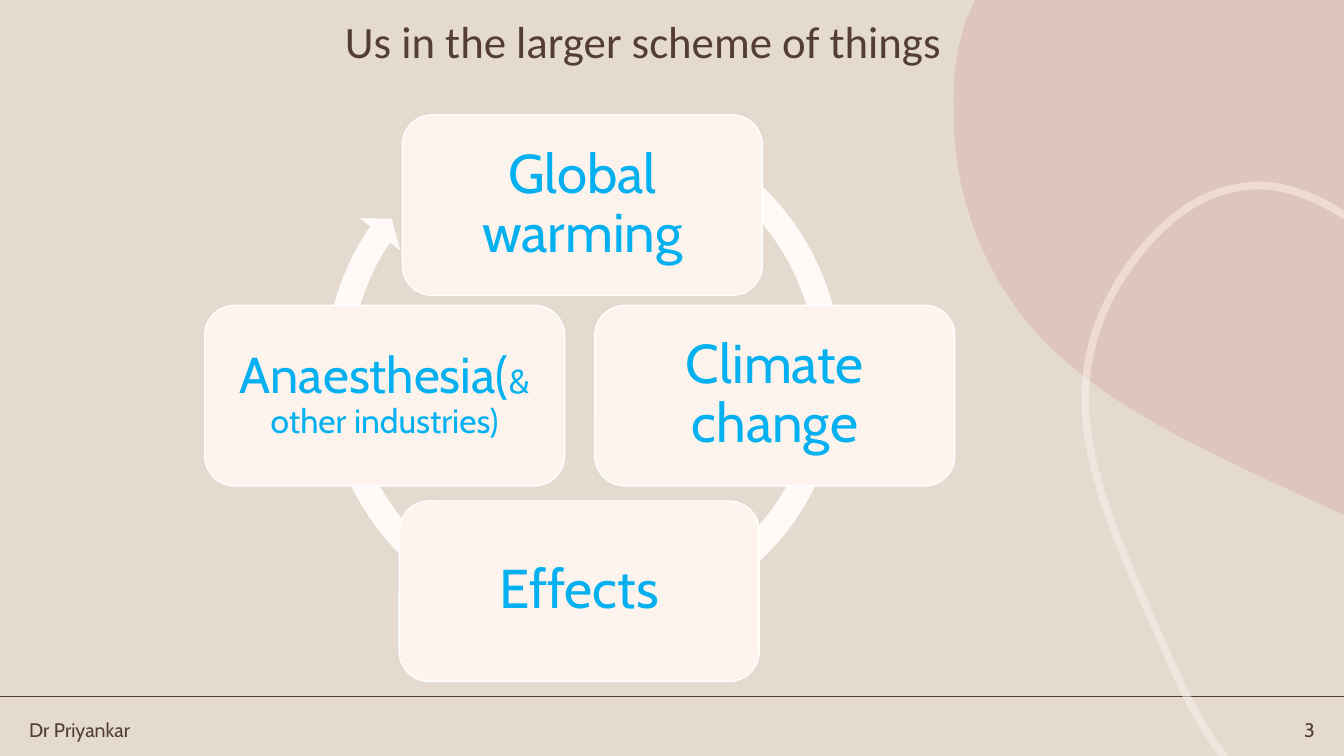
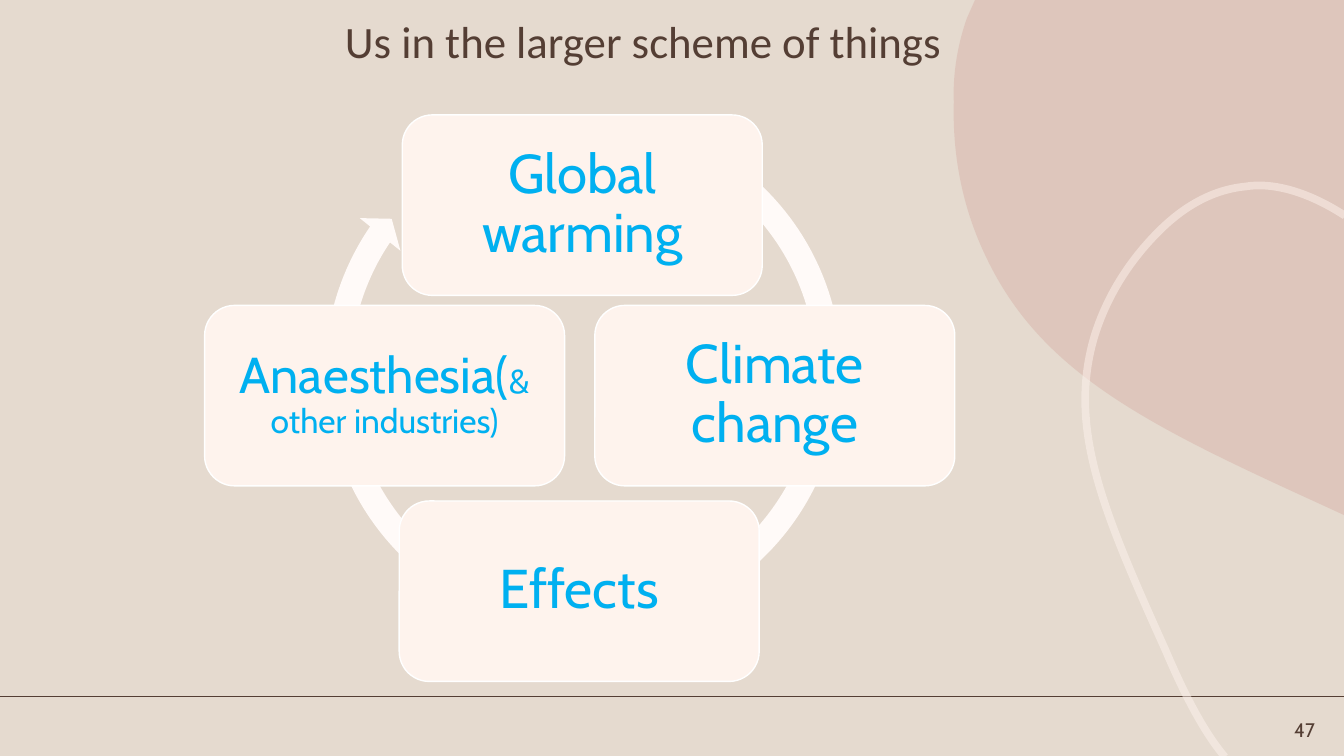
"""Build two slides showing the cycle that links anaesthesia and global warming."""
from dataclasses import dataclass
from itertools import chain

from lxml.etree import SubElement
from pptx import Presentation
from pptx.dml.color import RGBColor
from pptx.enum.shapes import MSO_CONNECTOR as Connector, MSO_SHAPE as Preset
from pptx.enum.text import MSO_ANCHOR as Anchor, MSO_AUTO_SIZE as AutoSize, PP_ALIGN as Align
from pptx.oxml.ns import qn
from pptx.util import Emu, Pt

PX = 9144
SLIDE_W, SLIDE_H = 1333, 750
BOX_W, BOX_H = 357, 179
RULE_Y = 691

SAND = RGBColor(0xE5, 0xDA, 0xCF)
BROWN = RGBColor(0x54, 0x3E, 0x34)
ROSE = RGBColor(0xCF, 0x9B, 0x92)
CREAM = RGBColor(0xFE, 0xF3, 0xED)
PALE = RGBColor(0xFF, 0xFA, 0xF8)
WHITE = RGBColor(0xFF, 0xFF, 0xFF)
SKY = RGBColor(0x00, 0xB0, 0xF0)
TITLE_FONT, TEXT_FONT = "Calibri", "Cabin"


@dataclass(frozen=True)
class Phrase:
    """Words of one size."""
    text: str
    size: int = 39


@dataclass(frozen=True)
class Stage:
    """One box of the cycle."""
    left: int
    top: int
    phrases: tuple[Phrase, ...]
    inset: int = 16


@dataclass(frozen=True)
class Page:
    """What differs from slide to slide."""
    number: str
    author: str = ""


TITLE = "Us in the larger scheme of things"
STAGES = (
    Stage(399, 114, (Phrase("Global warming"),)),
    Stage(590, 303, (Phrase("Climate change"),)),
    Stage(396, 497, (Phrase("Effects"),)),
    Stage(203, 303, (Phrase("Anaesthesia(", 36), Phrase("& other industries)", 24)), 15),
)
PAGES = (Page("3", "Dr Priyankar"), Page("47"))
CYCLE_ADJUSTMENTS = (0.04668, 2.729, 128.514, 180.172, 0.048)

BLOB = (
    ((967, 0),), ((1333, 0),), ((1333, 511),), ((1307, 499),),
    ((1136, 421), (1032, 369), (978, 255)),
    ((948, 193), (945, 135), (946, 101)),
    ((945, 79), (948, 49), (959, 18)),
)
LOOP = (
    ((1215, 751),),
    ((1198, 731), (1179, 699), (1156, 645)),
    ((1094, 507), (1058, 424), (1086, 332)),
    ((1101, 285), (1127, 253), (1144, 235)),
    ((1161, 217), (1192, 189), (1236, 185)),
    ((1241, 184), (1247, 184), (1252, 184)),
    ((1279, 185), (1308, 197), (1334, 214)),
)


def px(*lengths: int) -> list[Emu]:
    """Turn pixel lengths into EMU."""
    return [Emu(length * PX) for length in lengths]


def add_outline(slide, segments: tuple, close: bool):
    """Add a freeform whose three-point segments are cubic curves."""
    start, *rest = chain.from_iterable(segments)
    builder = slide.shapes.build_freeform(*start, scale=PX)
    builder.add_line_segments(rest, close=close)
    outline = builder.convert_to_shape()
    outline.shadow.inherit = False
    lines = iter(list(outline.element.iter(qn("a:lnTo"))))
    for segment in segments[1:]:
        first, *others = [next(lines) for _ in segment]
        if others:
            first.tag = qn("a:cubicBezTo")
        for line in others:
            first.append(line[0])
            line.getparent().remove(line)
    return outline


def set_opacity(shape, percent: int) -> None:
    """Make the shape's colour partly transparent."""
    for colour in shape.element.spPr.iter(qn("a:srgbClr")):
        SubElement(colour, qn("a:alpha")).set("val", str(percent * 1000))


def add_backdrop(slide) -> list:
    """Draw the footer rule, the rose blob and the loop."""
    rule = slide.shapes.add_connector(Connector.STRAIGHT, *px(0, RULE_Y, SLIDE_W, RULE_Y))
    rule.line.color.rgb = BROWN
    rule.line.width = Pt(1.25)
    SubElement(rule.element.spPr, qn("a:effectLst"))

    blob = add_outline(slide, BLOB, close=True)
    blob.fill.solid()
    blob.fill.fore_color.rgb = ROSE
    blob.line.fill.background()
    set_opacity(blob, 30)

    loop = add_outline(slide, LOOP, close=False)
    loop.fill.background()
    loop.line.color.rgb = CREAM
    loop.line.width = Pt(5.5)
    set_opacity(loop, 50)
    return [rule, blob, loop]


def share_backdrop(slide) -> None:
    """Draw the backdrop and hand it to the slide's layout."""
    layout = slide.slide_layout
    for placeholder in list(layout.placeholders)[1:]:
        layout.shapes.element.remove(placeholder.element)
    for shape in add_backdrop(slide):
        layout.shapes.element.append(shape.element)


def set_title(slide) -> None:
    """Place and format the title placeholder."""
    title = slide.shapes.title
    title.left, title.top, title.width, title.height = px(63, 9, 1150, 69)
    frame = title.text_frame
    frame.text = TITLE
    frame.auto_size = AutoSize.NONE
    frame.vertical_anchor = Anchor.MIDDLE
    heading = frame.paragraphs[0]
    heading.alignment = Align.CENTER
    heading.line_spacing = 0.9
    style_font(heading.font, TITLE_FONT, BROWN, 32)


def style_font(font, name: str, colour: RGBColor, size: int) -> None:
    """Set the face, colour and size of a font."""
    font.name = name
    font.color.rgb = colour
    font.size = Pt(size)


def add_cycle(slide) -> None:
    """Draw the circular arrow and the stages over it."""
    arrow = add_preset(slide, Preset.CIRCULAR_ARROW, (309, 100, 539, 539), PALE)
    for index, value in enumerate(CYCLE_ADJUSTMENTS):
        arrow.adjustments[index] = value
    arrow.line.fill.background()
    for stage in STAGES:
        add_stage(slide, stage)


def add_preset(slide, preset: Preset, place: tuple[int, ...], colour: RGBColor):
    """Add a filled preset shape without a shadow."""
    shape = slide.shapes.add_shape(preset, *px(*place))
    shape.shadow.inherit = False
    shape.fill.solid()
    shape.fill.fore_color.rgb = colour
    return shape


def add_stage(slide, stage: Stage) -> None:
    """Draw one rounded box with its words."""
    place = (stage.left, stage.top, BOX_W, BOX_H)
    box = add_preset(slide, Preset.ROUNDED_RECTANGLE, place, CREAM)
    box.line.color.rgb = WHITE
    box.line.width = Pt(1)
    frame = box.text_frame
    frame.word_wrap = True
    frame.vertical_anchor = Anchor.MIDDLE
    inset, = px(stage.inset)
    frame.margin_left = frame.margin_right = frame.margin_top = frame.margin_bottom = inset
    label = frame.paragraphs[0]
    label.alignment = Align.CENTER
    label.line_spacing = 0.9
    style_font(label.font, TEXT_FONT, SKY, stage.phrases[0].size)
    for phrase in stage.phrases:
        run = label.add_run()
        run.text = phrase.text
        style_font(run.font, TEXT_FONT, SKY, phrase.size)


def add_footer(slide, text: str, place: tuple[int, ...], align: Align) -> None:
    """Write one footer entry."""
    frame = slide.shapes.add_textbox(*px(*place)).text_frame
    frame.word_wrap = True
    frame.vertical_anchor = Anchor.MIDDLE
    entry = frame.paragraphs[0]
    entry.text = text
    entry.alignment = align
    style_font(entry.font, TEXT_FONT, BROWN, 14)


def main() -> None:
    """Build and save the presentation."""
    deck = Presentation()
    deck.slide_width, deck.slide_height = px(SLIDE_W, SLIDE_H)
    ground = deck.slide_master.background.fill
    ground.solid()
    ground.fore_color.rgb = SAND
    title_only = deck.slide_layouts.get_by_name("Title Only")
    slides = [deck.slides.add_slide(title_only) for _ in PAGES]
    share_backdrop(slides[0])
    for slide, page in zip(slides, PAGES):
        set_title(slide)
        add_cycle(slide)
        if page.author:
            add_footer(slide, page.author, (19, 707, 129, 34), Align.LEFT)
        add_footer(slide, page.number, (1206, 707, 108, 34), Align.RIGHT)
    deck.save("out.pptx")


if __name__ == "__main__":
    main()
